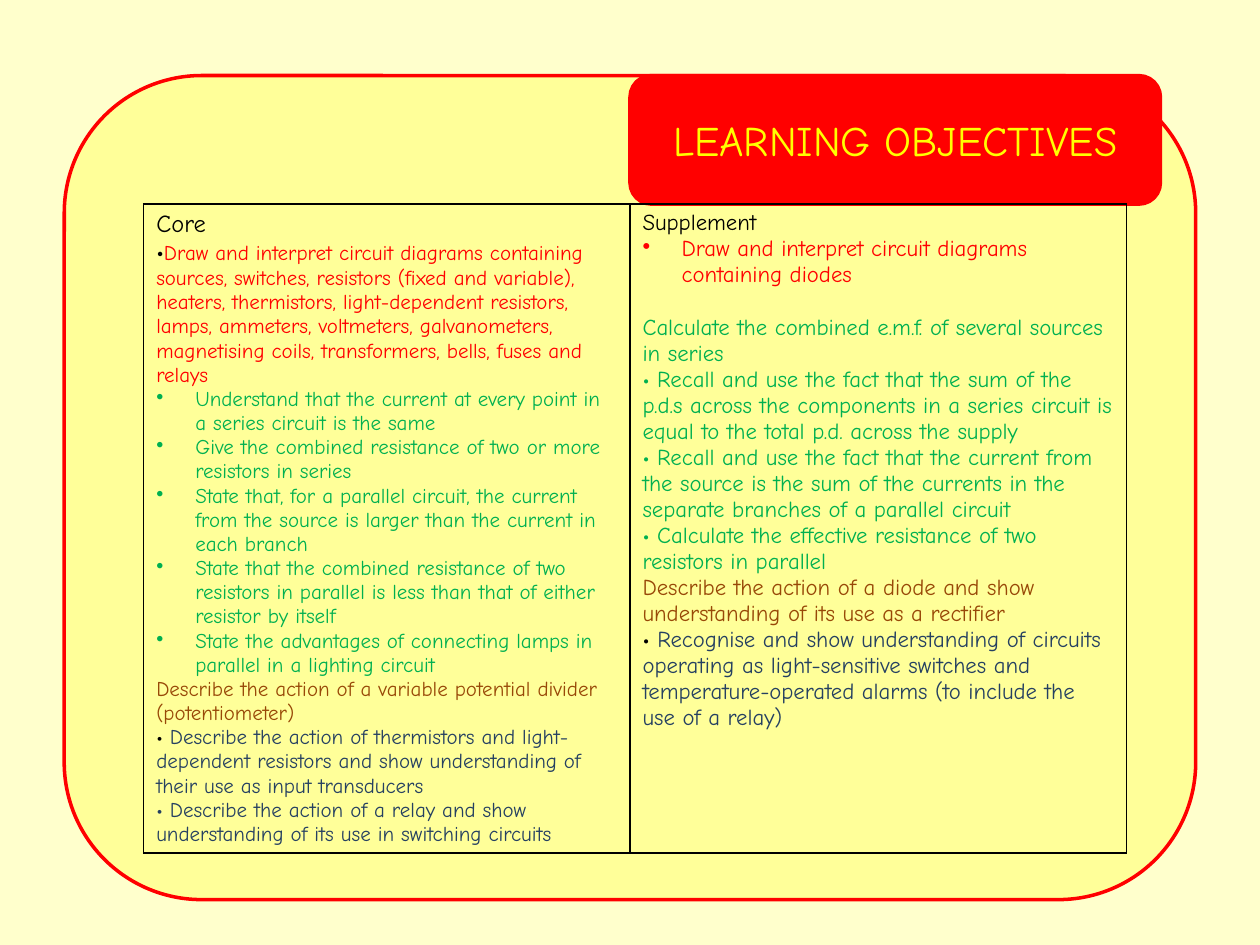
import dataclasses

import lxml.etree
import pptx
import pptx.dml.color
import pptx.enum.shapes
import pptx.enum.text
import pptx.oxml.ns
import pptx.util

Inches = pptx.util.Inches
Pt = pptx.util.Pt


@dataclasses.dataclass(frozen=True)
class Theme:
    font: str = "Comic Neue"
    backdrop: str = "FFFFCC"
    panel: str = "FFFF99"
    red: str = "FF0000"
    yellow: str = "FFFF00"
    black: str = "000000"
    green: str = "00B050"
    brown: str = "984807"
    navy: str = "254061"
    title_size: float = 24
    heading_size: float = 14
    core_size: float = 12
    supplement_size: float = 13


THEME = Theme()

# Each paragraph is (spans, options); each span is (text, colour, size)
CORE = [
    ([("Core", THEME.black, THEME.heading_size)], {}),
    ([("•", THEME.black, THEME.heading_size),
      ("Draw and interpret circuit diagrams containing sources, switches, "
       "resistors (fixed and variable), heaters, thermistors, light-dependent "
       "resistors, lamps, ammeters, voltmeters, galvanometers, magnetising "
       "coils, transformers, bells, fuses and relays",
       THEME.red, THEME.core_size)], {}),
    *[([(text, THEME.green, THEME.core_size)], {"bullet": True}) for text in (
        "Understand that the current at every point in a series circuit is the same",
        "Give the combined resistance of two or more resistors in series",
        "State that, for a parallel circuit, the current from the source is "
        "larger than the current in each branch",
        "State that the combined resistance of two resistors in parallel is "
        "less than that of either resistor by itself",
        "State the advantages of connecting lamps in parallel in a lighting circuit",
    )],
    ([("Describe the action of a variable potential divider (potentiometer)",
       THEME.brown, THEME.core_size)], {}),
    ([("• ", THEME.black, THEME.core_size),
      ("Describe the action of thermistors and light- dependent resistors and "
       "show understanding of their use as input transducers",
       THEME.navy, THEME.core_size)], {}),
    ([("• Describe the action of a relay and show understanding of its use in "
       "switching circuits", THEME.navy, THEME.core_size)], {}),
]
SUPPLEMENT = [
    ([("Supplement", THEME.black, THEME.supplement_size)], {}),
    ([("Draw and interpret circuit diagrams containing diodes",
       THEME.red, THEME.supplement_size)], {"bullet": True}),
    ([("Calculate the combined e.m.f. of several sources in series",
       THEME.green, THEME.supplement_size)], {"space_before": 15}),
    *[([(text, THEME.green, THEME.supplement_size)], {}) for text in (
        "• Recall and use the fact that the sum of the p.d.s across the "
        "components in a series circuit is equal to the total p.d. across the supply",
        "• Recall and use the fact that the current from the source is the sum "
        "of the currents in the separate branches of a parallel circuit",
        "• Calculate the effective resistance of two resistors in parallel",
    )],
    ([("Describe the action of a diode and show understanding of its use as a "
       "rectifier", THEME.brown, THEME.supplement_size)], {}),
    ([("• ", THEME.black, THEME.supplement_size),
      ("Recognise and show understanding of circuits operating as "
       "light-sensitive switches and temperature-operated alarms (to include "
       "the use of a relay)", THEME.navy, THEME.supplement_size)], {}),
]


def rgb(colour):
    return pptx.dml.color.RGBColor.from_string(colour)


def add_text(para, text, *, size, colour):
    span = para.add_run()
    span.text = text
    span.font.name = THEME.font
    span.font.size = Pt(size)
    span.font.color.rgb = rgb(colour)


def add_bullet(para):
    properties = para._p.get_or_add_pPr()
    properties.set("marL", str(Inches(0.31)))
    properties.set("indent", str(-Inches(0.31)))
    bullet = lxml.etree.SubElement(properties, pptx.oxml.ns.qn("a:buChar"))
    bullet.set("char", "•")


def add_rounded_box(page, box, fill):
    shape = page.shapes.add_shape(
        pptx.enum.shapes.MSO_SHAPE.ROUNDED_RECTANGLE, *map(Inches, box))
    shape.shadow.inherit = False
    shape.fill.solid()
    shape.fill.fore_color.rgb = rgb(fill)
    shape.line.color.rgb = rgb(THEME.red)
    shape.line.width = Pt(2)


def add_title_tab(page, box, text):
    add_rounded_box(page, box, THEME.red)
    title = page.shapes.title
    title.left, title.top, title.width, title.height = map(Inches, box)
    # Bring the title in front of its tab
    title.element.getparent().append(title.element)
    frame = title.text_frame
    frame.word_wrap = True
    frame.vertical_anchor = pptx.enum.text.MSO_ANCHOR.MIDDLE
    para = frame.paragraphs[0]
    para.alignment = pptx.enum.text.PP_ALIGN.CENTER
    add_text(para, text, size=THEME.title_size, colour=THEME.yellow)


def add_cell_borders(cell):
    properties = cell._tc.get_or_add_tcPr()
    for index, side in enumerate(("lnL", "lnR", "lnT", "lnB")):
        line = lxml.etree.Element(pptx.oxml.ns.qn(f"a:{side}"), w=str(Pt(1)))
        fill = lxml.etree.SubElement(line, pptx.oxml.ns.qn("a:solidFill"))
        lxml.etree.SubElement(
            fill, pptx.oxml.ns.qn("a:srgbClr"), val=THEME.black)
        properties.insert(index, line)


def fill_cell(cell, content):
    cell.fill.background()
    add_cell_borders(cell)
    frame = cell.text_frame
    for index, (spans, options) in enumerate(content):
        para = frame.add_paragraph() if index else frame.paragraphs[0]
        if "space_before" in options:
            para.space_before = Pt(options["space_before"])
        if options.get("bullet"):
            add_bullet(para)
        for text, colour, size in spans:
            add_text(para, text, size=size, colour=colour)


def add_objectives(page, box, widths, columns):
    table = page.shapes.add_table(1, len(columns), *map(Inches, box)).table
    table.first_row = False
    table.horz_banding = False
    for index, (width, content) in enumerate(zip(widths, columns)):
        table.columns[index].width = Inches(width)
        fill_cell(table.cell(0, index), content)


def main():
    deck = pptx.Presentation()
    deck.slide_width, deck.slide_height = Inches(10), Inches(7.5)
    page = deck.slides.add_slide(deck.slide_layouts[5])
    page.background.fill.solid()
    page.background.fill.fore_color.rgb = rgb(THEME.backdrop)

    # Panel, title tab, then the two columns of objectives
    add_rounded_box(page, (0.51, 0.6, 8.98, 6.54), THEME.panel)
    add_title_tab(page, (5, 0.6, 4.21, 1.02), "LEARNING OBJECTIVES")
    add_objectives(page, (1.14, 1.62, 7.8, 5.15), (3.86, 3.94),
                   (CORE, SUPPLEMENT))
    deck.save("out.pptx")


if __name__ == "__main__":
    main()
